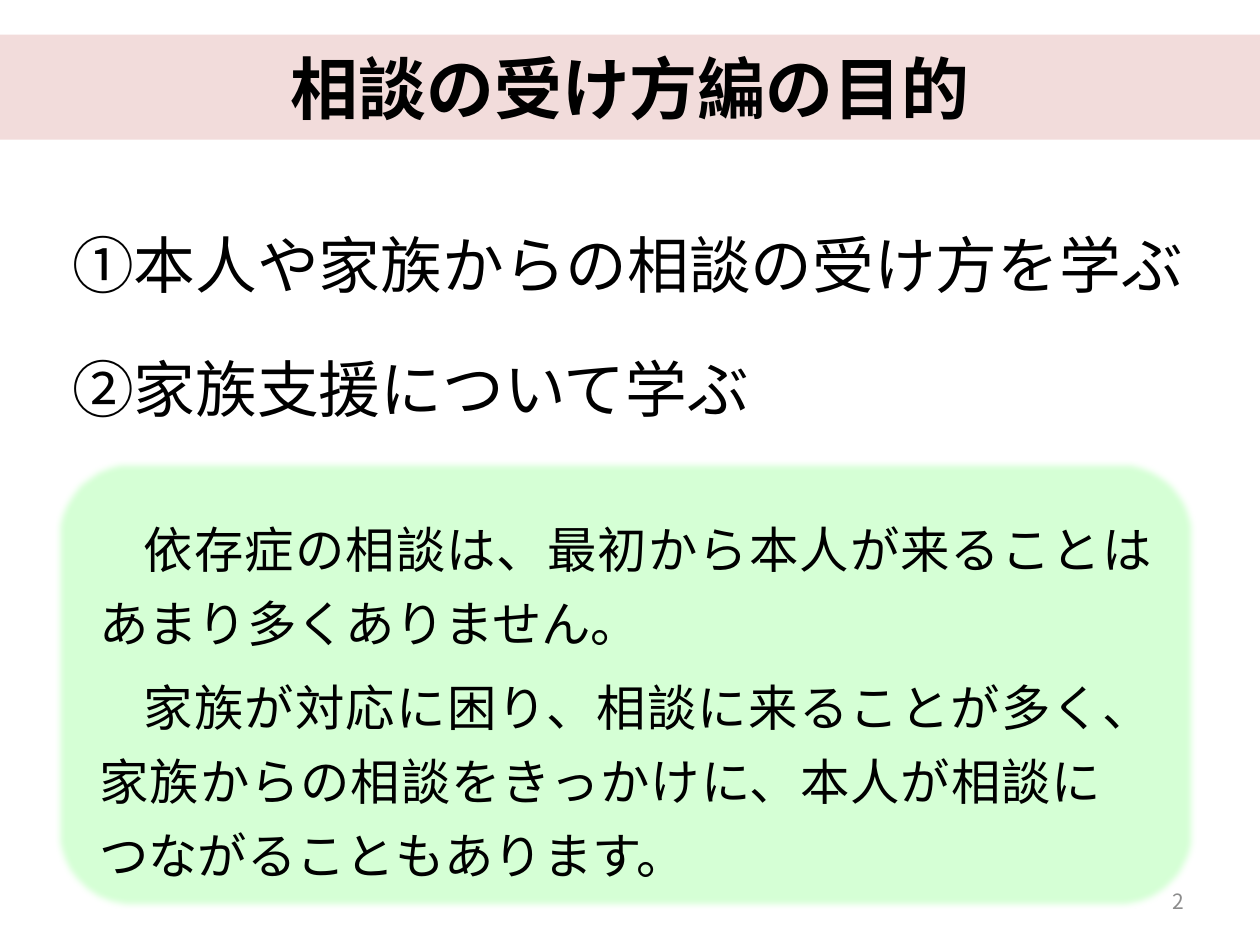
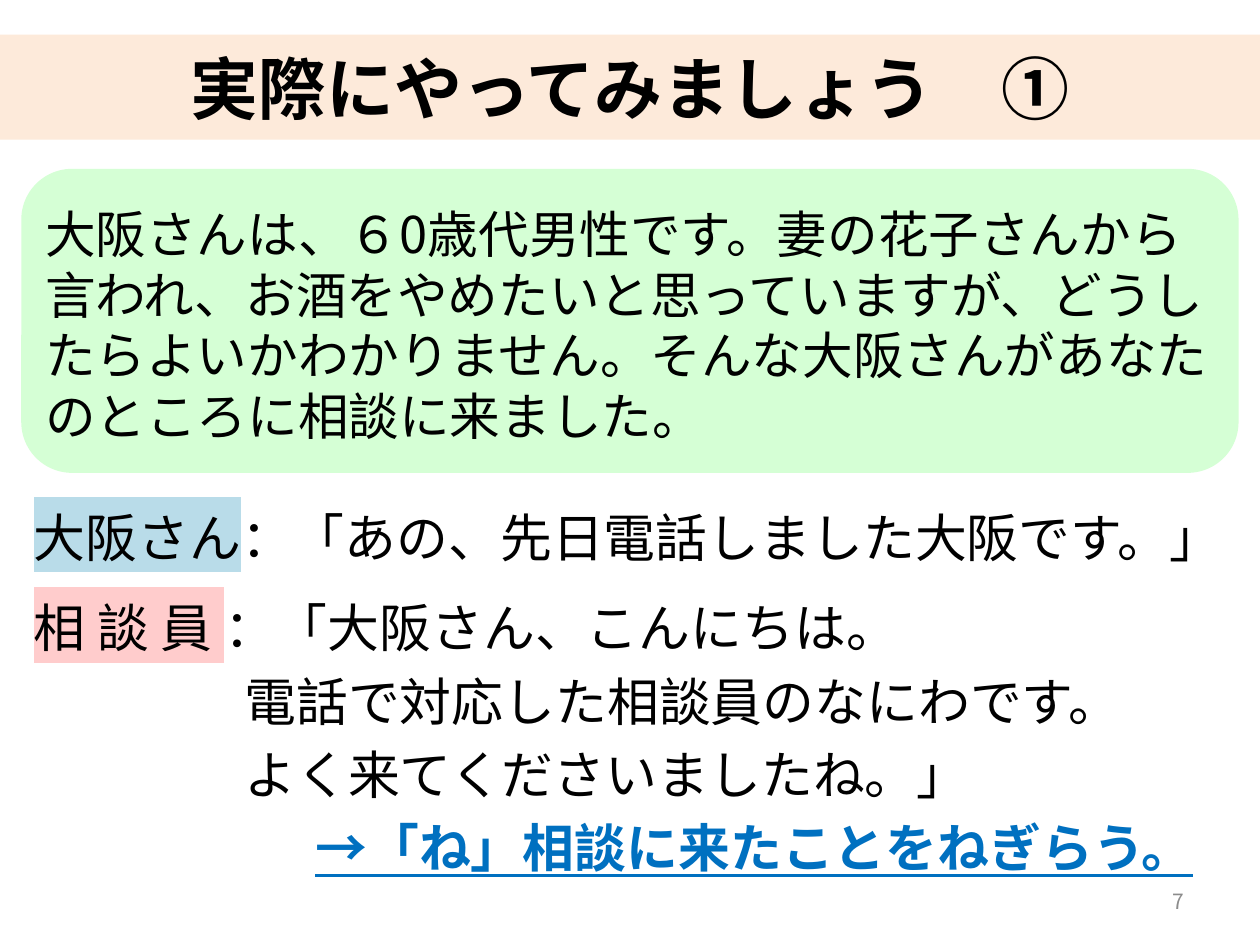
from lxml.etree import SubElement
from pptx import Presentation
from pptx.dml.color import RGBColor
from pptx.enum.shapes import MSO_SHAPE as Preset
from pptx.enum.text import MSO_ANCHOR as Anchor, MSO_AUTO_SIZE as AutoSize, PP_ALIGN as Align
from pptx.oxml.ns import qn
from pptx.util import Inches, Pt

FONT = "Noto Sans CJK JP"
BLACK, GREY, BLUE = "000000", "8C8C8C", "0070C0"
GREEN, SKY, PINK = "D5FFD5", "B9DCE9", "FFCCCC"
ROSE_BAND, PEACH_BAND = "F2DCDB", "FDEADA"


def color(value):
    return RGBColor.from_string(value)


def write(paragraph, text, size, fill=BLACK, bold=False, underline=False, highlight=None):
    run = paragraph.add_run()
    run.text = text
    font = run.font
    font.size, font.bold, font.underline, font.name = Pt(size), bold, underline, FONT
    font.color.rgb = color(fill)
    properties = font._element
    SubElement(properties, qn("a:ea")).set("typeface", FONT)
    if highlight:
        mark = SubElement(properties, qn("a:highlight"))
        SubElement(mark, qn("a:srgbClr")).set("val", highlight)
        properties.find(qn("a:solidFill")).addnext(mark)


class Deck:
    def __init__(self, width, height):
        self.presentation = Presentation()
        self.presentation.slide_width = Inches(width)
        self.presentation.slide_height = Inches(height)
        self.slide = None

    def box(self, left, top, width, height):
        across = self.presentation.slide_width / 100
        down = self.presentation.slide_height / 100
        return int(left * across), int(top * down), int(width * across), int(height * down)

    def frame(self, shape, inset, anchor=Anchor.TOP):
        frame = shape.text_frame
        frame.word_wrap, frame.auto_size = True, AutoSize.NONE
        frame.vertical_anchor = anchor
        frame.margin_left = frame.margin_right = Inches(inset)
        frame.margin_top = frame.margin_bottom = Inches(inset / 2)
        return frame

    def add_slide(self, title, band, number):
        self.slide = self.presentation.slides.add_slide(self.presentation.slide_layouts[5])
        shape = self.slide.shapes.title
        shape.left, shape.top, shape.width, shape.height = self.box(0, 3.67, 100, 11.1)
        shape.fill.solid()
        shape.fill.fore_color.rgb = color(band)
        paragraph = self.frame(shape, 0.14, Anchor.MIDDLE).paragraphs[0]
        paragraph.alignment = Align.CENTER
        write(paragraph, title, 55, bold=True)
        self.text((71.65, 92.66, 23.34, 5.36), [{"runs": [(number, {"fill": GREY})]}],
                  size=17, align=Align.RIGHT, anchor=Anchor.MIDDLE)

    def panel(self, area, adjustment=0.167, soft_edge=0):
        shape = self.slide.shapes.add_shape(Preset.ROUNDED_RECTANGLE, *self.box(*area))
        shape.adjustments[0] = adjustment
        shape.shadow.inherit = False
        shape.fill.solid()
        shape.fill.fore_color.rgb = color(GREEN)
        shape.line.fill.background()
        if soft_edge:
            effects = shape._element.spPr.find(qn("a:effectLst"))
            SubElement(effects, qn("a:softEdge")).set("rad", str(Pt(soft_edge)))

    def text(self, area, paragraphs, size, line=None, align=Align.LEFT,
             inset=0.14, anchor=Anchor.TOP):
        shape = self.slide.shapes.add_textbox(*self.box(*area))
        frame = self.frame(shape, inset, anchor)
        for index, content in enumerate(paragraphs):
            paragraph = frame.add_paragraph() if index else frame.paragraphs[0]
            paragraph.alignment = align
            paragraph.space_before = Pt(content.get("before", 0))
            if line:
                paragraph.line_spacing = Pt(line)
            properties = paragraph._p.get_or_add_pPr()
            properties.set("marL", str(Inches(content.get("margin", 0))))
            properties.set("indent", str(Inches(content.get("indent", 0))))
            for words, style in content["runs"]:
                write(paragraph, words, size, **style)


def plain(text, **layout):
    return {"runs": [(text, {})], **layout}


def build_purpose(deck):
    deck.add_slide("相談の受け方編の目的", ROSE_BAND, "2")
    deck.panel((4.44, 48.73, 90.55, 47.51), adjustment=0.162, soft_edge=5)
    deck.text((4.73, 18.16, 90.55, 26.72), [
        plain("①本人や家族からの相談の受け方を学ぶ", margin=0.78, indent=-0.78),
        plain("②家族支援について学ぶ", margin=0.78, indent=-0.78),
    ], size=50, line=100)
    deck.text((7.19, 52.87, 84.98, 40.73), [
        plain("依存症の相談は、最初から本人が来ることはあまり多くありません。", indent=0.5),
        plain("家族が対応に困り、相談に来ることが多く、家族からの相談をきっかけに、"
              "本人が相談に　つながることもあります。", indent=0.5, before=8),
    ], size=40, line=60, align=Align.JUSTIFY, inset=0.1)


def build_practice(deck):
    deck.add_slide("実際にやってみましょう　①", PEACH_BAND, "7")
    deck.panel((1.69, 17.87, 96.61, 32.17))
    deck.text((2.89, 21.07, 94.22, 27.56), [
        plain("大阪さんは、６0歳代男性です。妻の花子さんから言われ、お酒をやめたいと"
              "思っていますが、どうしたらよいかわかりません。そんな大阪さんがあなたの"
              "ところに相談に来ました。"),
    ], size=41, line=49, inset=0.1)
    deck.text((1.69, 51.65, 96.61, 44.97), [
        {"runs": [("大阪さん", {"highlight": SKY}),
                  ("：「あの、先日電話しました大阪です。」", {})]},
        {"runs": [("相 談 員 ", {"highlight": PINK}),
                  ("：「大阪さん、こんにちは。", {})], "before": 13.5},
        plain("電話で対応した相談員のなにわです。", margin=2.37),
        plain("よく来てくださいましたね。」", margin=2.37),
        {"runs": [("→「ね」相談に来たことをねぎらう。",
                   {"fill": BLUE, "bold": True, "underline": True})], "margin": 3.17},
    ], size=42, line=59.5)


def main():
    deck = Deck(14.18, 10.63)
    build_purpose(deck)
    build_practice(deck)
    deck.presentation.save("out.pptx")


if __name__ == "__main__":
    main()
